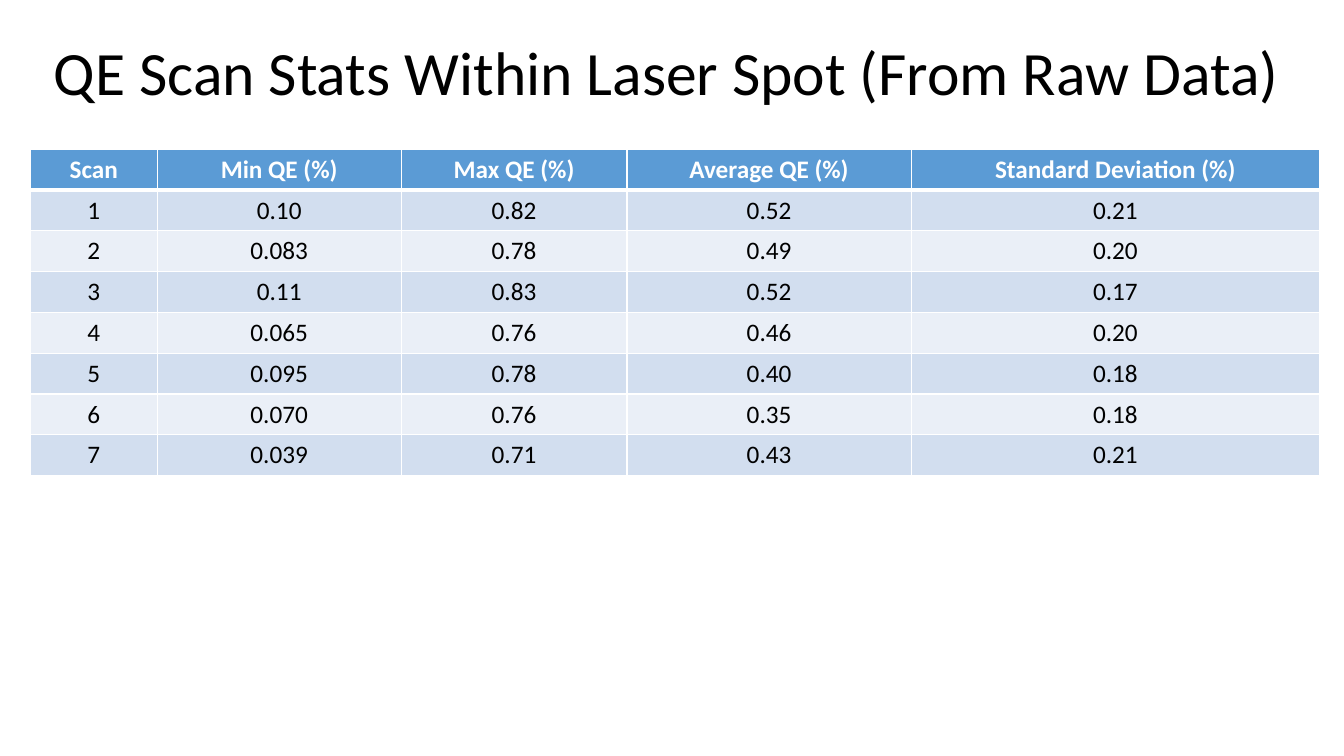
from dataclasses import astuple, dataclass

from lxml import etree
from pptx import Presentation
from pptx import util as u
from pptx.dml.color import RGBColor
from pptx.enum import text
from pptx.oxml import ns

SLIDE_WIDTH, SLIDE_HEIGHT = u.Inches(13.33), u.Inches(7.5)
FONT = "Calibri"
BLACK, WHITE = "000000", "FFFFFF"
HEADER_FILL = "5B9BD5"
BAND_FILLS = ("EAEFF7", "D2DEEF")

# Positions and sizes are percentages of the slide's width or height.
LEFT = 2.25
TITLE_TOP, TITLE_WIDTH, TITLE_HEIGHT = 0.4, 94.75, 19.33
TABLE_TOP, ROW_HEIGHT = 19.73, 5.4
COLUMN_WIDTHS = (9.45, 18.15, 16.8, 21.15, 30.38)


@dataclass
class Scan:
    number: str
    minimum: str
    maximum: str
    average: str
    deviation: str


HEADER = Scan("Scan", "Min QE (%)", "Max QE (%)", "Average QE (%)", "Standard Deviation (%)")
SCANS = [
    Scan("1", "0.10", "0.82", "0.52", "0.21"),
    Scan("2", "0.083", "0.78", "0.49", "0.20"),
    Scan("3", "0.11", "0.83", "0.52", "0.17"),
    Scan("4", "0.065", "0.76", "0.46", "0.20"),
    Scan("5", "0.095", "0.78", "0.40", "0.18"),
    Scan("6", "0.070", "0.76", "0.35", "0.18"),
    Scan("7", "0.039", "0.71", "0.43", "0.21"),
]


def across(percent: float) -> int:
    return u.Emu(round(SLIDE_WIDTH * percent / 100))


def down(percent: float) -> int:
    return u.Emu(round(SLIDE_HEIGHT * percent / 100))


def color(hex_value: str) -> RGBColor:
    return RGBColor.from_string(hex_value)


def write(paragraph, words: str, size: float, hex_value: str, bold: bool = False) -> None:
    paragraph.text = words
    paragraph.alignment = text.PP_ALIGN.CENTER
    font = paragraph.font
    font.name, font.size, font.bold = FONT, u.Pt(size), bold
    font.color.rgb = color(hex_value)


def add_border(cell, side: str, points: float) -> None:
    """Draw a white line on side L, R, T or B; call before filling the cell."""
    properties = cell._tc.get_or_add_tcPr()
    line = etree.SubElement(properties, ns.qn(f"a:ln{side}"), w=str(u.Pt(points)))
    fill = etree.SubElement(line, ns.qn("a:solidFill"))
    etree.SubElement(fill, ns.qn("a:srgbClr"), val=WHITE)


def add_title(slide, words: str) -> None:
    box = slide.shapes.add_textbox(
        across(LEFT), down(TITLE_TOP), across(TITLE_WIDTH), down(TITLE_HEIGHT))
    frame = box.text_frame
    frame.word_wrap = True
    frame.vertical_anchor = text.MSO_ANCHOR.MIDDLE
    paragraph = frame.paragraphs[0]
    write(paragraph, words, 44, BLACK)
    paragraph.line_spacing = 0.9


def style_cell(cell, row: int, words: str) -> None:
    is_header = row == 0
    write(cell.text_frame.paragraphs[0], words, 18, WHITE if is_header else BLACK, is_header)
    borders = {"L": 1, "R": 1, "T": 3 if row == 1 else 1, "B": 3 if is_header else 1}
    for side, points in borders.items():
        add_border(cell, side, points)
    cell.fill.solid()
    cell.fill.fore_color.rgb = color(HEADER_FILL if is_header else BAND_FILLS[row % 2])


def add_scan_table(slide, scans: list[Scan]) -> None:
    rows = [HEADER, *scans]
    table = slide.shapes.add_table(
        len(rows), len(COLUMN_WIDTHS), across(LEFT), down(TABLE_TOP),
        across(sum(COLUMN_WIDTHS)), down(ROW_HEIGHT * len(rows))).table
    for column, width in zip(table.columns, COLUMN_WIDTHS):
        column.width = across(width)
    for row, scan in enumerate(rows):
        table.rows[row].height = down(ROW_HEIGHT)
        for column, words in enumerate(astuple(scan)):
            style_cell(table.cell(row, column), row, words)


def main() -> None:
    presentation = Presentation()
    presentation.slide_width, presentation.slide_height = SLIDE_WIDTH, SLIDE_HEIGHT
    slide = presentation.slides.add_slide(presentation.slide_layouts[6])
    add_title(slide, "QE Scan Stats Within Laser Spot (From Raw Data)")
    add_scan_table(slide, SCANS)
    presentation.save("out.pptx")


if __name__ == "__main__":
    main()
